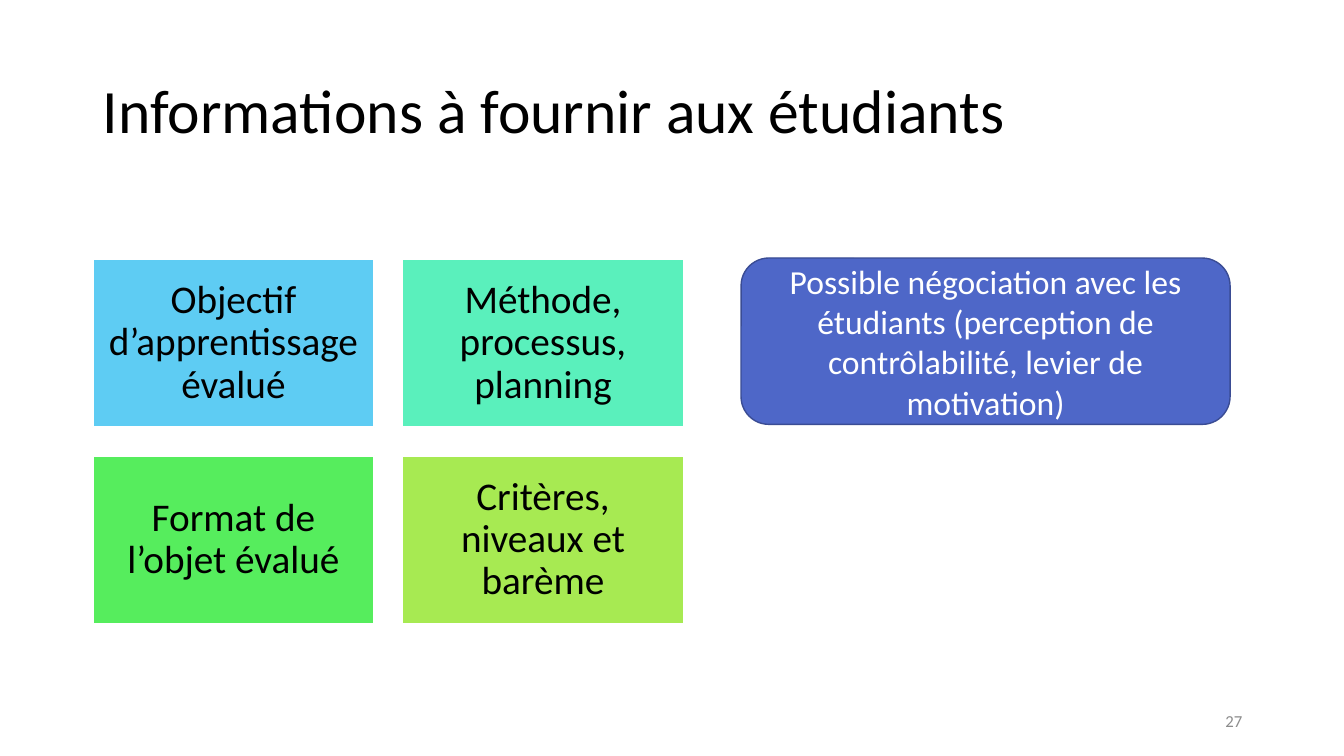
from pptx import Presentation
from pptx.dml.color import RGBColor
from pptx.enum import shapes, text
from pptx.util import Inches, Pt

BLACK = RGBColor(0x00, 0x00, 0x00)
WHITE = RGBColor(0xFF, 0xFF, 0xFF)
GREY = RGBColor(0x8C, 0x8C, 0x8C)
SKY = RGBColor(0x5E, 0xCC, 0xF3)
MINT = RGBColor(0x5A, 0xF0, 0xBC)
GREEN = RGBColor(0x56, 0xED, 0x5D)
LIME = RGBColor(0xA7, 0xEA, 0x52)
INDIGO = RGBColor(0x4E, 0x67, 0xC8)
NAVY = RGBColor(0x3A, 0x4C, 0x94)

HEADING = "Informations à fournir aux étudiants"
TOPICS = [
    ("Objectif d’apprentissage évalué", SKY),
    ("Méthode, processus, planning", MINT),
    ("Format de l’objet évalué", GREEN),
    ("Critères, niveaux et barème", LIME),
]
NEGOTIATION = ("Possible négociation avec les étudiants "
               "(perception de contrôlabilité, levier de motivation)")
PAGE = "27"

COLUMNS = 2
GRID_LEFT, GRID_TOP = 0.92, 2.57
TOPIC_WIDTH, TOPIC_HEIGHT, GAP = 2.79, 1.67, 0.28

LEFT, CENTER, RIGHT = (text.PP_ALIGN.LEFT, text.PP_ALIGN.CENTER,
                       text.PP_ALIGN.RIGHT)
HEADING_FORMAT = {"alignment": LEFT, "line_spacing": 0.9}
TOPIC_FORMAT = {"alignment": CENTER, "line_spacing": 0.9}
NEGOTIATION_FORMAT = {"alignment": CENTER}
PAGE_FORMAT = {"alignment": RIGHT}
FRAME_FORMAT = {"word_wrap": True, "auto_size": text.MSO_AUTO_SIZE.NONE,
                "vertical_anchor": text.MSO_ANCHOR.MIDDLE}
TOPIC_MARGINS = {f"margin_{side}": Inches(0.12)
                 for side in ("left", "top", "right", "bottom")}


def apply(target, values):
    for name, value in values.items():
        setattr(target, name, value)


def write(part, wording, size, color, paragraph_format, margins=None):
    frame = part.text_frame
    frame.text = wording
    apply(frame, {**FRAME_FORMAT, **(margins or {})})
    paragraph = frame.paragraphs[0]
    apply(paragraph, paragraph_format)
    apply(paragraph.font, {"name": "Calibri", "size": Pt(size)})
    paragraph.font.color.rgb = color


def add_box(slide, kind, place, fill, line, line_width):
    box = slide.shapes.add_shape(kind, *map(Inches, place))
    box.shadow.inherit = False
    box.fill.solid()
    box.fill.fore_color.rgb = fill
    box.line.color.rgb = line
    box.line.width = Pt(line_width)
    return box


def main():
    deck = Presentation()
    deck.slide_width, deck.slide_height = Inches(13.33), Inches(7.5)
    slide = deck.slides.add_slide(deck.slide_layouts[5])

    heading = slide.shapes.title
    apply(heading, {"left": Inches(0.92), "top": Inches(0.4),
                    "width": Inches(11.5), "height": Inches(1.45)})
    write(heading, HEADING, 44, BLACK, HEADING_FORMAT)

    for index, (wording, fill) in enumerate(TOPICS):
        row, column = divmod(index, COLUMNS)
        place = (GRID_LEFT + column * (TOPIC_WIDTH + GAP),
                 GRID_TOP + row * (TOPIC_HEIGHT + GAP),
                 TOPIC_WIDTH, TOPIC_HEIGHT)
        topic = add_box(slide, shapes.MSO_SHAPE.RECTANGLE, place,
                        fill, WHITE, 1.5)
        write(topic, wording, 28, BLACK, TOPIC_FORMAT, TOPIC_MARGINS)

    page = slide.shapes.add_textbox(*map(Inches, (9.42, 6.95, 3, 0.4)))
    write(page, PAGE, 12, GREY, PAGE_FORMAT)

    negotiation = add_box(slide, shapes.MSO_SHAPE.ROUNDED_RECTANGLE,
                          (7.35, 2.56, 4.85, 1.65), INDIGO, NAVY, 1)
    write(negotiation, NEGOTIATION, 24, WHITE, NEGOTIATION_FORMAT)

    deck.save("out.pptx")


if __name__ == "__main__":
    main()
